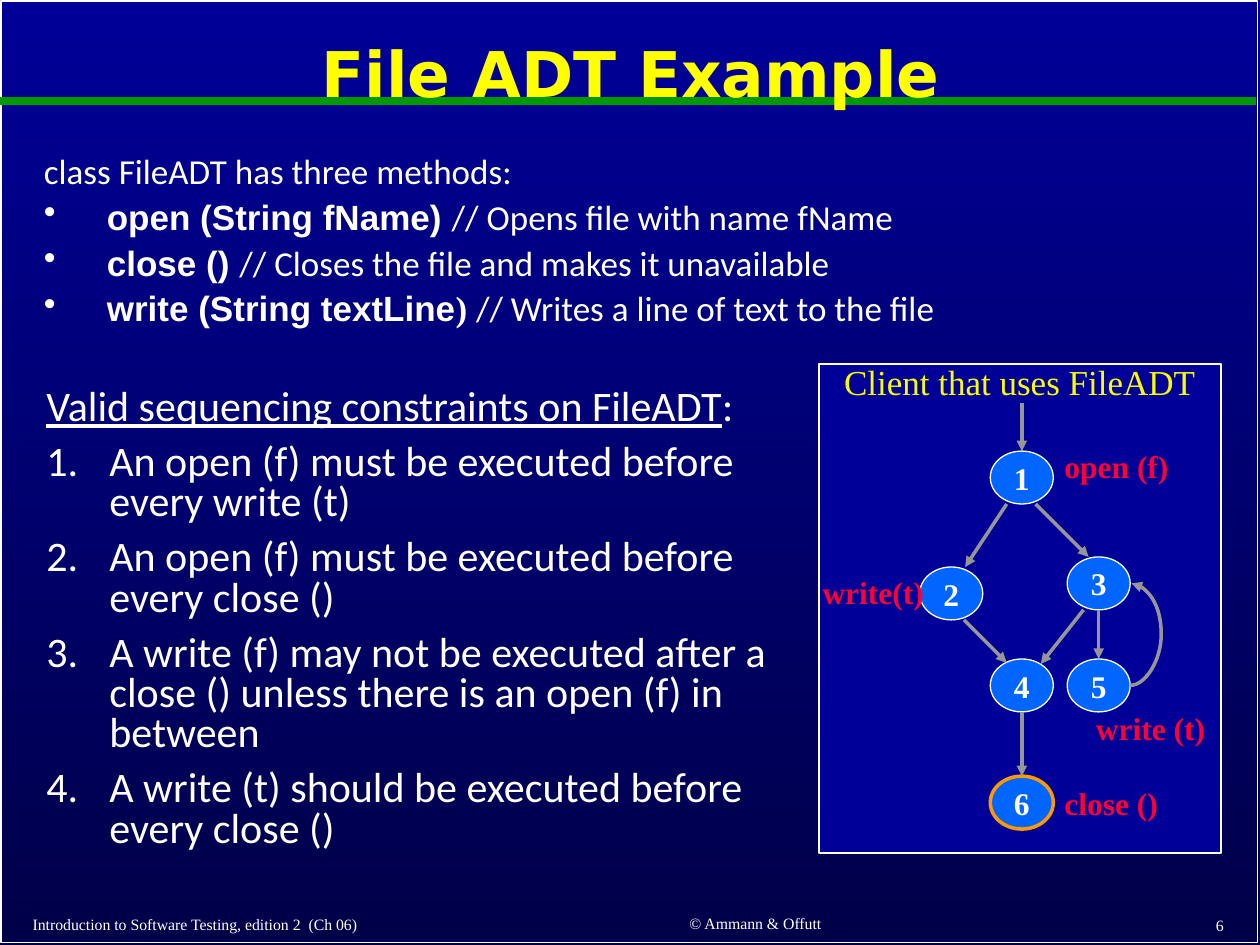
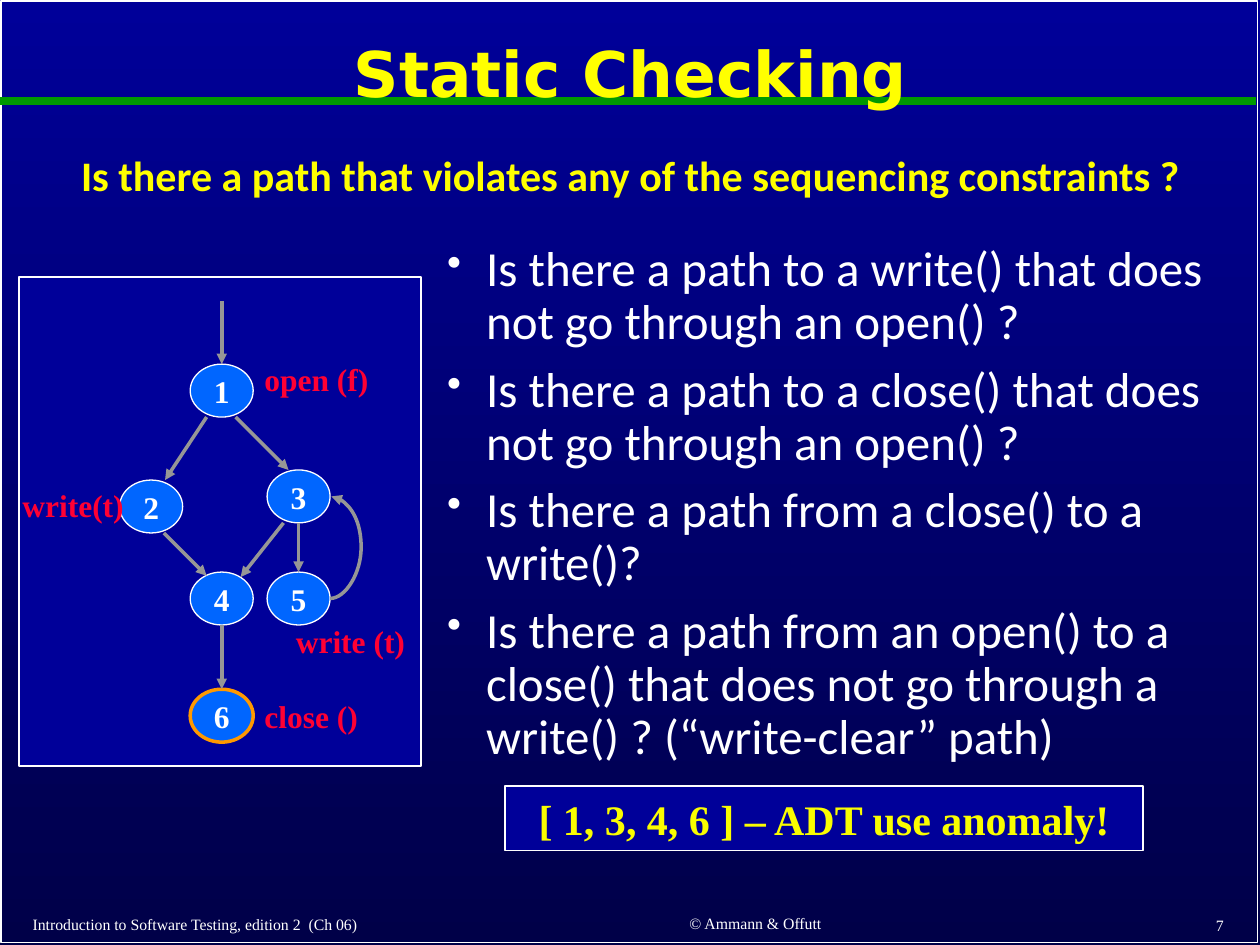
from dataclasses import dataclass

from lxml import etree
from pptx import Presentation
from pptx import util as u
from pptx.dml import color
from pptx.enum import shapes, text
from pptx.oxml import ns


@dataclass(frozen=True)
class Theme:
    sky: str = "000099"
    night: str = "000048"
    white: str = "FFFFFF"
    green: str = "009900"
    yellow: str = "FFFF00"
    lemon: str = "FAFD00"
    blue: str = "0066FF"
    orange: str = "FF9900"
    grey: str = "969696"
    red: str = "FF0033"
    heading: str = "DejaVu Sans"
    body: str = "Calibri"
    code: str = "Arial"
    serif: str = "Times New Roman"
    title: int = 36
    large: int = 28
    medium: int = 24
    small: int = 20
    node: int = 18
    footer: int = 9


THEME = Theme()
COLUMNS, ROWS = 100, 75
WIDTH, HEIGHT = u.Inches(10), u.Inches(7.5)


@dataclass(frozen=True)
class Box:
    left: float
    top: float
    wide: float
    high: float

    def region(self, left, top, wide, high):
        return Box(self.left + left, self.top + top, wide, high)

    def point(self, left, top):
        return emu(self.left + left, self.top + top)

    def place(self):
        return (*emu(self.left, self.top), *emu(self.wide, self.high))


PAGE = Box(0, 0, COLUMNS, ROWS)
NODE_WIDE, NODE_HIGH = 5, 4.2
NODES = {
    "1": (16.1, 9), "2": (10.5, 18.2), "3": (22.2, 17.4),
    "4": (16.1, 25.5), "5": (22.2, 25.5), "6": (16.1, 34.8),
}
EDGES = [
    ("1", "2", -1.2, 1.1, 2.1), ("1", "3", 1.1, -0.8, 2.1),
    ("2", "4", 1, -1.2, 1.8), ("3", "4", -1.2, 1.5, 1.7),
    ("3", "5", 0, 0, 2.1), ("4", "6", 0, 0, 2.1),
]
CALLS = [
    ("open (f)", 18.5, 6.1), ("write(t)", -0.7, 16.1),
    ("write (t)", 21, 26.9), ("close ()", 18.5, 32.8),
]


def emu(across, down):
    return round(across * WIDTH / COLUMNS), round(down * HEIGHT / ROWS)


def rgb(value):
    return color.RGBColor.from_string(value)


def style(span, size, font, ink, bold=False, underline=False):
    span.font.size = u.Pt(size)
    span.font.name = font
    span.font.color.rgb = rgb(ink)
    span.font.bold = bold
    span.font.underline = underline


def write(shape, words, size, font, ink, bold=False, align="LEFT", middle=False):
    frame = shape.text_frame
    frame.word_wrap = True
    frame.auto_size = text.MSO_AUTO_SIZE.NONE
    frame.vertical_anchor = text.MSO_ANCHOR.MIDDLE if middle else text.MSO_ANCHOR.TOP
    frame.text = words
    para = frame.paragraphs[0]
    para.alignment = getattr(text.PP_ALIGN, align)
    style(para.runs[0], size, font, ink, bold)
    return para


def add_text(parent, box, words, *look, **options):
    return write(parent.shapes.add_textbox(*box.place()), words, *look, **options)


def add_bullet(para, mark, indent, scale=None):
    props = para._p.get_or_add_pPr()
    props.set("marL", str(u.Inches(indent)))
    props.set("indent", str(-u.Inches(indent)))
    if scale:
        etree.SubElement(props, ns.qn("a:buSzPct"), val=str(scale * 1000))
    if mark == "1.":
        etree.SubElement(props, ns.qn("a:buAutoNum"), type="arabicPeriod")
    elif mark:
        etree.SubElement(props, ns.qn("a:buChar"), char=mark)


def add_list(page, box, items, size, spacing, gap, indent, scale=None):
    frame = page.shapes.add_textbox(*box.place()).text_frame
    frame.word_wrap = True
    for index, (mark, spans) in enumerate(items):
        para = frame.add_paragraph() if index else frame.paragraphs[0]
        para.line_spacing = spacing
        para.space_before = u.Pt(size * gap)
        add_bullet(para, mark, indent, scale)
        for words, font, bold, underline in spans:
            span = para.add_run()
            span.text = words
            style(span, size, font, THEME.white, bold, underline)


def plain(words, underline=False):
    return words, THEME.body, False, underline


def code(words, font=THEME.code):
    return words, font, True, False


def add_shape(parent, kind, box, fill, line, weight):
    shape = parent.shapes.add_shape(kind, *box.place())
    shape.shadow.inherit = False
    if fill:
        shape.fill.solid()
        shape.fill.fore_color.rgb = rgb(fill)
    else:
        shape.fill.background()
    shape.line.color.rgb = rgb(line)
    shape.line.width = u.Pt(weight)
    return shape


def add_panel(parent, box, fill=THEME.sky):
    return add_shape(parent, shapes.MSO_SHAPE.RECTANGLE, box, fill, THEME.white, 1)


def add_line(parent, start, end, ink, weight, arrow=True, kind="STRAIGHT"):
    line = parent.shapes.add_connector(
        getattr(shapes.MSO_CONNECTOR, kind), *start, *end)
    line.line.color.rgb = rgb(ink)
    line.line.width = u.Pt(weight)
    props = line.element.spPr
    etree.SubElement(props, ns.qn("a:effectLst"))
    if arrow:
        etree.SubElement(props.find(ns.qn("a:ln")), ns.qn("a:tailEnd"), type="triangle")
    return line


def add_return_loop(group, box):
    column, low = NODES["5"]
    high = NODES["3"][1]
    side = column + NODE_WIDE / 2
    nudge, bulge = 0.1, 2.5
    loop = add_line(group, box.point(side, low), box.point(side + nudge, high),
                    THEME.grey, 2, kind="CURVE")
    guides = loop.element.spPr.find(ns.qn("a:prstGeom")).get_or_add_avLst()
    etree.SubElement(guides, ns.qn("a:gd"), name="adj1",
                     fmla=f"val {round(bulge / nudge * 100000)}")


def add_flow_graph(page, box, entry):
    group = page.shapes.add_group_shape()
    add_panel(group, box)
    for name, (column, row) in NODES.items():
        final = name == "6"
        spot = box.region(column - NODE_WIDE / 2, row - NODE_HIGH / 2, NODE_WIDE, NODE_HIGH)
        node = add_shape(group, shapes.MSO_SHAPE.OVAL, spot, THEME.blue,
                         THEME.orange if final else THEME.white, 2 if final else 0.75)
        frame = node.text_frame
        frame.margin_left = frame.margin_right = frame.margin_top = frame.margin_bottom = 0
        write(node, name, THEME.node, THEME.serif, THEME.white, True, "CENTER", True)
    for first, second, leave, arrive, rise in EDGES:
        (column, row), (next_column, next_row) = NODES[first], NODES[second]
        add_line(group, box.point(column + leave, row + NODE_HIGH / 2),
                 box.point(next_column + arrive, next_row - rise), THEME.grey, 2)
    column, row = NODES["1"]
    add_line(group, box.point(column, entry), box.point(column, row - NODE_HIGH / 2),
             THEME.grey, 2)
    add_return_loop(group, box)
    for words, left, top in CALLS:
        add_text(group, box.region(left, top, 11.7, 4), words,
                 THEME.node, THEME.serif, THEME.red, True)


def dress_master(deck):
    fill = deck.slide_master.background.fill
    fill.gradient()
    fill.gradient_angle = 270
    for stop, ink in zip(fill.gradient_stops, (THEME.sky, THEME.night)):
        stop.color.rgb = rgb(ink)


def dress_layout(layout, page):
    frame = add_panel(page, PAGE.region(0.1, 0.1, 99.7, 74.7), fill=None)
    band = add_line(page, PAGE.point(0, 8), PAGE.point(99.7, 8), THEME.green, 4.5, arrow=False)
    for shape in (frame, band):
        layout.shapes.element.append(shape.element)


def add_footers(page, box, number):
    footers = [
        ("Introduction to Software Testing, edition 2  (Ch 06)", 1.6, 0.2, 40.9, "LEFT"),
        ("© Ammann & Offutt", 44.1, 0.1, 31.7, "CENTER"),
        (str(number), 77.3, 0.3, 20.8, "RIGHT"),
    ]
    for words, left, top, wide, align in footers:
        add_text(page, box.region(left, top, wide, 2.3), words, THEME.footer,
                 THEME.serif, THEME.white, align=align, middle=True)


def add_page(deck, layout, title, number):
    page = deck.slides.add_slide(layout)
    heading = page.shapes.title
    spot = PAGE.region(1.5, 1.1, 97.1, 10)
    heading.left, heading.top, heading.width, heading.height = spot.place()
    para = write(heading, title, THEME.title, THEME.heading, THEME.yellow, True, "CENTER", True)
    para.line_spacing = 0.9
    add_footers(page, PAGE.region(0, 72, COLUMNS, 3), number)
    return page


def fill_example(page, box):
    methods = [
        (None, [plain("class FileADT has three methods:")]),
        ("•", [code("open (String fName) "), plain("// Opens file with name fName")]),
        ("•", [code("close () "), plain("// Closes the file and makes it unavailable")]),
        ("•", [code("write (String textLine"), code(") ", THEME.serif),
               plain("// Writes a line of text to the file")]),
    ]
    rules = [
        "An open (f) must be executed before every write (t)",
        "An open (f) must be executed before every close ()",
        "A write (f) may not be executed after a close () unless there is an open (f) in between",
        "A write (t) should be executed before every close ()",
    ]
    constraints = [(None, [plain("Valid sequencing constraints on FileADT", True), plain(":")])]
    constraints += [("1.", [plain(rule)]) for rule in rules]
    add_list(page, box.region(2.5, 12, 80, 15.2), methods, THEME.small, 0.8, 0.35, 0.5)
    add_list(page, box.region(2.7, 30.4, 62.3, 39), constraints, THEME.medium, 0.8, 0.35, 0.5)
    graph = box.region(65, 28.9, 31.9, 38.8)
    add_flow_graph(page, graph, entry=3.1)
    add_text(page, graph.region(1, -0.8, 30.5, 4.4), "Client that uses FileADT",
             THEME.small, THEME.serif, THEME.lemon)


def fill_checking(page, box):
    questions = [
        "Is there a path to a write() that does not go through an open() ?",
        "Is there a path to a close() that does not go through an open() ?",
        "Is there a path from a close() to a write()?",
        "Is there a path from an open() to a close() that does not go through a write() ? "
        "(“write-clear” path)",
    ]
    add_list(page, box.region(34.5, 18.9, 64.4, 42),
             [("•", [plain(words)]) for words in questions],
             THEME.large, 0.9, 0.3, 0.31, scale=85)
    add_flow_graph(page, box.region(1.5, 22, 31.9, 38.8), entry=1.9)
    lead = add_text(page, box.region(3.9, 11.8, 92.3, 8.3),
                    "Is there a path that violates any of the sequencing constraints ?",
                    THEME.medium, THEME.body, THEME.yellow, True, align="CENTER")
    lead.line_spacing = 0.9
    write(add_panel(page, box.region(40.1, 62.4, 50.6, 5.1)), "[ 1, 3, 4, 6 ] – ADT use anomaly!",
          THEME.medium, THEME.serif, THEME.lemon, True, "CENTER", True)


def main():
    deck = Presentation()
    deck.slide_width, deck.slide_height = WIDTH, HEIGHT
    layout = deck.slide_layouts.get_by_name("Title Only")
    dress_master(deck)
    example = add_page(deck, layout, "File ADT Example", 6)
    dress_layout(layout, example)
    fill_example(example, PAGE)
    fill_checking(add_page(deck, layout, "Static Checking", 7), PAGE)
    deck.save("out.pptx")


if __name__ == "__main__":
    main()
